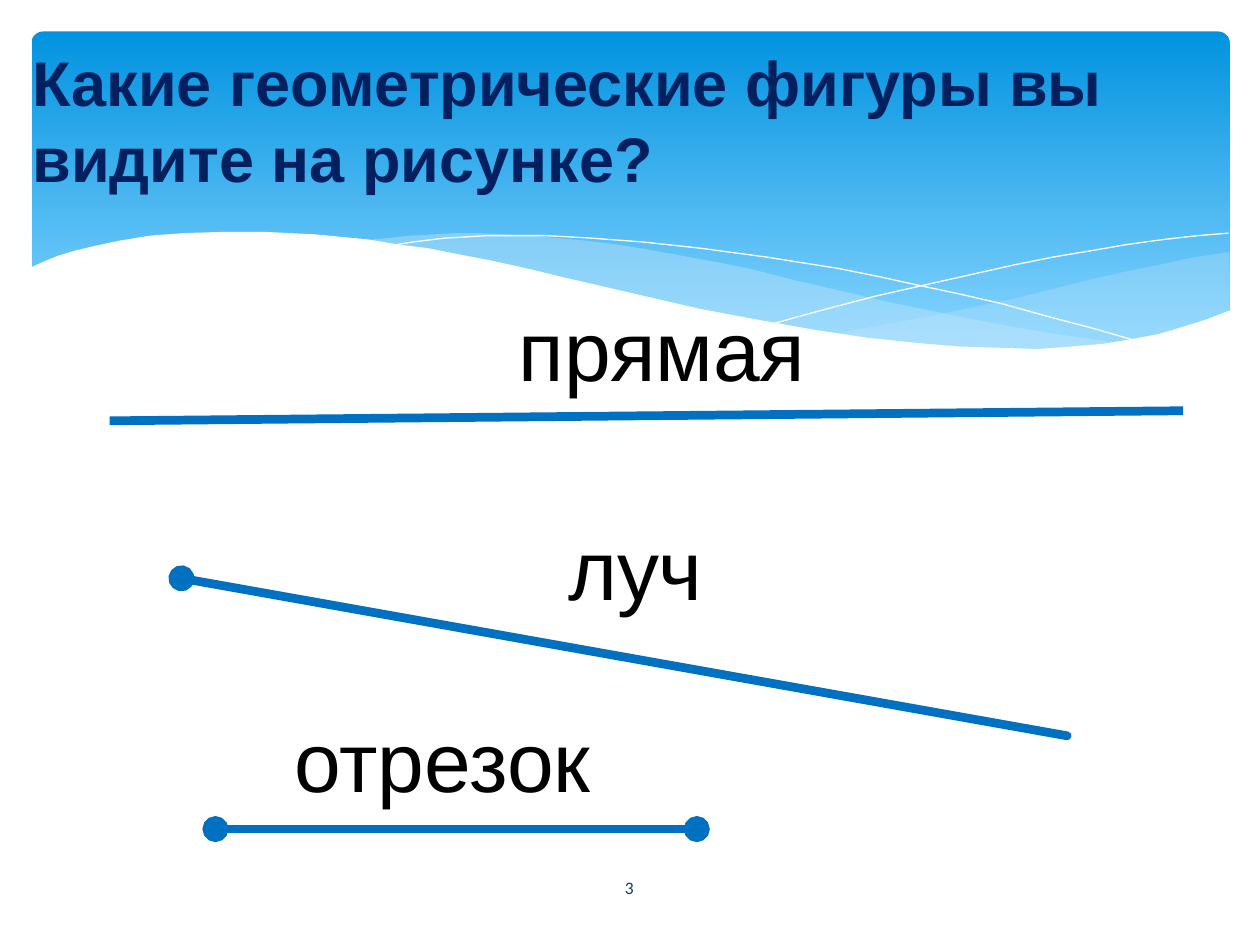
from lxml import etree
from pptx import Presentation
from pptx.dml.color import RGBColor
from pptx.enum.shapes import MSO_CONNECTOR, MSO_SHAPE
from pptx.enum.text import MSO_ANCHOR, PP_ALIGN
from pptx.oxml.ns import qn
from pptx.util import Inches, Pt

STRAIGHT = MSO_CONNECTOR.STRAIGHT
ROUNDED = MSO_SHAPE.ROUNDED_RECTANGLE
TOP, MIDDLE = MSO_ANCHOR.TOP, MSO_ANCHOR.MIDDLE
LEFT, CENTER = PP_ALIGN.LEFT, PP_ALIGN.CENTER

WHITE = RGBColor(0xFF, 0xFF, 0xFF)
BLACK = RGBColor(0x00, 0x00, 0x00)
NAVY = RGBColor(0x00, 0x20, 0x60)
BLUE = RGBColor(0x00, 0x70, 0xC0)
SKY_TOP = RGBColor(0x02, 0x93, 0xE0)
SKY_BOTTOM = RGBColor(0x83, 0xD3, 0xFE)
PALE = RGBColor(0xC6, 0xE7, 0xFC)
NUMBER_BLUE = RGBColor(0x07, 0x3E, 0x87)

prs = Presentation()
prs.slide_width, prs.slide_height = Inches(10), Inches(7.5)
s = prs.slides.add_slide(prs.slide_layouts[6])


def add_outline(points, close):
    """Draw a freeform through points in inches; the builder rounds, so it gets EMU."""
    start, *rest = [(Inches(x), Inches(y)) for x, y in points]
    builder = s.shapes.build_freeform(*start)
    builder.add_line_segments(rest, close=close)
    sp = builder.convert_to_shape()
    sp.shadow.inherit = False
    return sp


def add_text(text, box, size, color, font="Arial", bold=False, align=LEFT, anchor=TOP):
    tb = s.shapes.add_textbox(*map(Inches, box))
    tf = tb.text_frame
    tf.word_wrap = True
    tf.vertical_anchor = anchor
    p = tf.paragraphs[0]
    p.text = text
    p.alignment = align
    p.font.name, p.font.size, p.font.bold = font, Pt(size), bold
    p.font.color.rgb = color


# Header panel
panel = s.shapes.add_shape(ROUNDED, Inches(0.25), Inches(0.25), Inches(9.51), Inches(2.7))
panel.adjustments[0] = 0.034
panel.shadow.inherit = False
panel.line.fill.background()
panel.fill.gradient()
panel.fill.gradient_angle = 270
for stop, color, position in zip(panel.fill.gradient_stops, (SKY_TOP, SKY_BOTTOM), (0, 0.9)):
    stop.color.rgb = color
    stop.position = position

# Waves along the lower edge of the panel
right_wave = [
    (9.76, 2), (9.48, 2.04), (9.21, 2.1), (8.91, 2.16), (8.61, 2.23), (8.05, 2.37),
    (7.53, 2.48), (7.06, 2.57), (6.61, 2.65), (6.91, 2.69), (7.19, 2.72), (7.45, 2.75),
    (7.69, 2.77), (8.03, 2.78), (8.35, 2.77), (8.63, 2.75), (8.89, 2.72), (9.13, 2.67),
    (9.35, 2.62), (9.49, 2.57), (9.63, 2.52), (9.76, 2.47),
]
middle_wave = [
    (8.93, 2.73), (8.66, 2.69), (8.37, 2.65), (8.07, 2.6), (7.75, 2.54), (7.41, 2.47),
    (7.06, 2.4), (6.68, 2.31), (6.29, 2.22), (5.98, 2.14), (5.69, 2.08), (5.41, 2.03),
    (5.14, 1.98), (4.89, 1.94), (4.65, 1.91), (4.42, 1.89), (4.2, 1.87), (3.99, 1.86),
    (3.8, 1.85), (3.61, 1.85), (3.28, 1.87), (2.86, 1.91), (3.23, 1.96), (3.62, 2.03),
    (4.04, 2.11), (4.49, 2.22), (4.91, 2.32), (5.3, 2.4), (5.66, 2.48), (6.01, 2.55),
    (6.34, 2.61), (6.65, 2.66), (6.95, 2.7), (7.22, 2.74), (7.48, 2.76), (7.73, 2.77),
    (7.96, 2.78), (8.28, 2.78), (8.57, 2.77), (8.76, 2.75),
]
white_wave = [
    (9.77, 2.46), (9.59, 2.53), (9.4, 2.59), (9.2, 2.65), (8.99, 2.69), (8.75, 2.73),
    (8.5, 2.75), (8.23, 2.77), (7.93, 2.76), (7.61, 2.75), (7.26, 2.72), (6.88, 2.68),
    (6.48, 2.62), (6.03, 2.54), (5.55, 2.45), (5.03, 2.33), (4.47, 2.2), (4.18, 2.13),
    (3.91, 2.07), (3.65, 2.02), (3.4, 1.97), (3.16, 1.94), (2.92, 1.9), (2.71, 1.88),
    (2.5, 1.86), (2.3, 1.85), (2.11, 1.84), (1.77, 1.84), (1.46, 1.85), (1.19, 1.87),
    (0.95, 1.91), (0.76, 1.95), (0.59, 1.99), (0.46, 2.03), (0.36, 2.07), (0.23, 2.13),
    (0.23, 3.29), (9.77, 3.29),
]
falling_curve = [
    (3.09, 1.95), (3.28, 1.92), (3.53, 1.89), (3.87, 1.87), (4.33, 1.87), (4.69, 1.89),
    (5.1, 1.92), (5.56, 1.97), (6.08, 2.04), (6.65, 2.13), (6.95, 2.19), (7.27, 2.26),
    (7.6, 2.33), (7.95, 2.41), (8.31, 2.51), (8.69, 2.61), (9.07, 2.72),
]
rising_curve = [
    (6.13, 2.57), (6.53, 2.46), (6.95, 2.35), (7.48, 2.23), (8.06, 2.1), (8.36, 2.04),
    (8.66, 1.99), (8.95, 1.94), (9.24, 1.9), (9.51, 1.87), (9.75, 1.85),
]

for points, opacity in ((right_wave, 29), (middle_wave, 40)):
    wave = add_outline(points, True)
    wave.line.fill.background()
    wave.fill.solid()
    wave.fill.fore_color.rgb = PALE
    rgb = wave._element.spPr.find(qn("a:solidFill"))[0]
    etree.SubElement(rgb, qn("a:alpha"), val=str(opacity * 1000))

for points in (falling_curve, rising_curve):
    curve = add_outline(points, False)
    curve.fill.background()
    curve.line.color.rgb = WHITE
    curve.line.width = Pt(0)

wave = add_outline(white_wave, True)
wave.line.fill.background()
wave.fill.solid()
wave.fill.fore_color.rgb = WHITE

add_text("Какие геометрические фигуры вы видите на рисунке?",
         (0.16, 0.3, 9.35, 1.3), 36, NAVY, bold=True)

# Line, ray and segment: label, label position, ends, marked ends, cap
figures = [
    ("прямая", (4.02, 2.31), (0.87, 3.34), (9.39, 3.26), (), "flat"),
    ("луч", (4.41, 4.05), (1.44, 4.59), (8.47, 5.84), ("headEnd",), "rnd"),
    ("отрезок", (2.24, 5.57), (1.71, 6.58), (5.53, 6.58), ("headEnd", "tailEnd"), "flat"),
]
for label, corner, start, end, marked_ends, cap in figures:
    line = s.shapes.add_connector(STRAIGHT, *map(Inches, start + end))
    line.line.color.rgb = BLUE
    line.line.width = Pt(5)
    ln = line._element.spPr.find(qn("a:ln"))
    ln.set("cap", cap)
    for tag in marked_ends:
        etree.SubElement(ln, qn(f"a:{tag}"), type="oval")
    etree.SubElement(line._element.spPr, qn("a:effectLst"))
    add_text(label, corner + (2.89, 0.91), 48, BLACK)

add_text("3", (4.36, 6.84, 1.27, 0.4), 10, NUMBER_BLUE, "Calibri", align=CENTER, anchor=MIDDLE)

prs.save("out.pptx")
